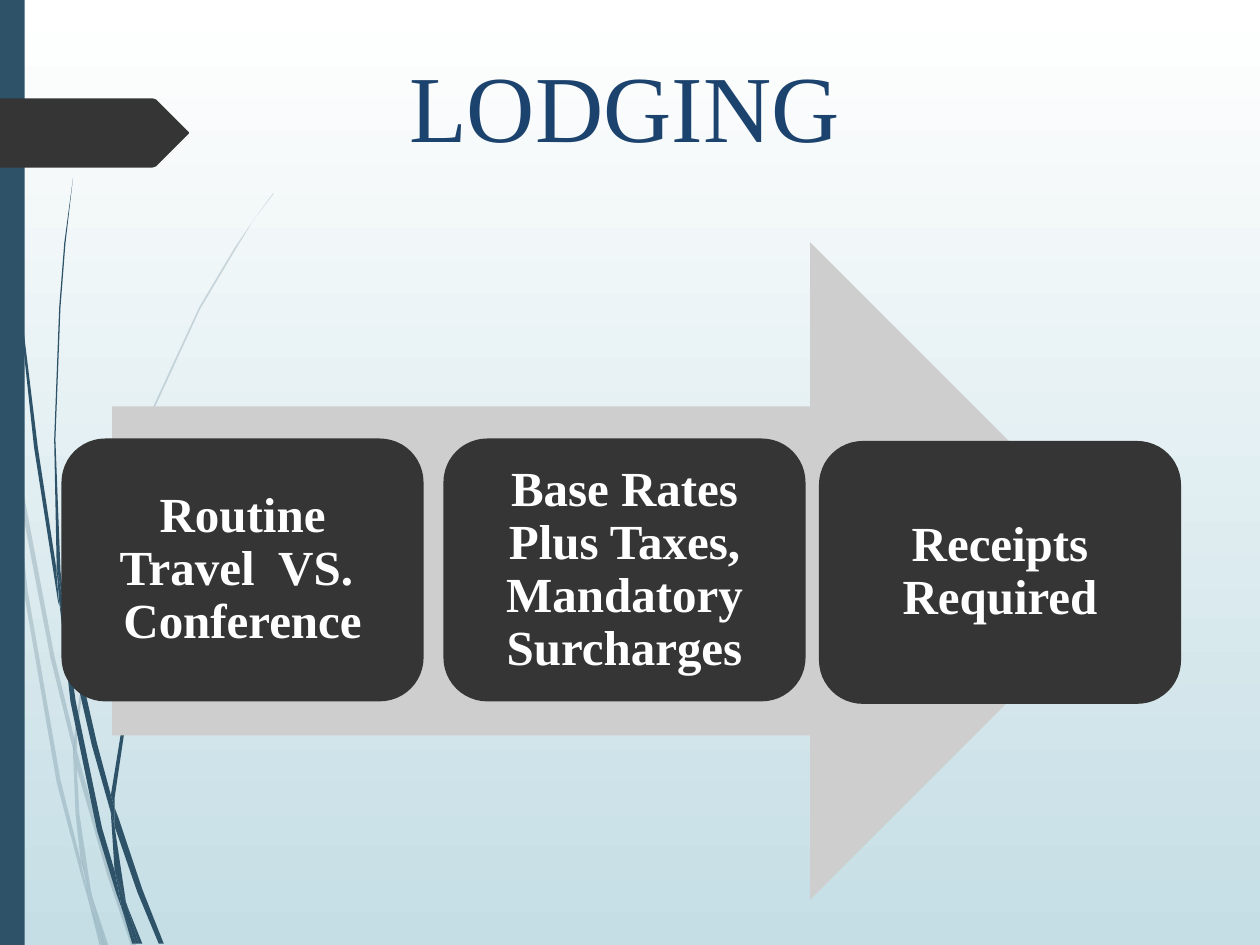
"""Build the lodging slide: a process arrow with three cards beside decorative wisps."""
from dataclasses import dataclass

from pptx import Presentation
from pptx.dml.color import RGBColor as Rgb
from pptx.enum.shapes import MSO_SHAPE as Preset
from pptx.enum.text import MSO_ANCHOR as Anchor, PP_ALIGN as Align
from pptx.oxml.ns import qn
from pptx.util import Cm, Pt
from lxml.etree import SubElement


@dataclass(frozen=True)
class Theme:
    """Colours, font and type sizes of the slide."""
    sky_top: str = "FFFFFF"
    sky_bottom: str = "C5DEE5"
    wisp: str = "2E5369"
    dark: str = "353535"
    arrow: str = "CECECE"
    title: str = "1C436D"
    card_text: str = "FFFFFF"
    font: str = "Times New Roman"
    title_size: int = 54
    card_size: int = 28
    faint: int = 20


PALE_WISPS = [
    [(8, 350), (6, 322), (0, 282), (0, 299), (7, 344)],
    [(40, 522), (59, 599), (59, 586), (43, 520), (10, 345), (12, 376)],
    [(64, 607), (61, 596), (61, 610), (85, 694), (104, 750), (108, 750), (88, 692)],
    [(83, 750), (86, 750), (73, 711)],
    [(64, 683), (48, 619), (22, 469), (12, 376), (8, 350), (19, 470), (45, 621),
     (64, 693), (70, 714), (69, 707)],
    [(58, 599), (60, 646), (64, 683), (67, 692), (73, 711), (72, 706), (63, 646),
     (61, 610), (61, 608)],
    [(61, 584), (76, 462), (111, 349), (159, 245), (187, 198), (201, 175), (217, 154),
     (217, 153), (201, 175), (186, 197), (158, 244), (110, 348), (75, 461), (59, 584),
     (59, 586), (61, 596)],
    [(70, 714), (79, 750), (82, 750)],
    [(61, 608), (61, 610), (61, 596), (59, 586), (58, 599)],
    [(67, 692), (65, 683), (69, 707), (70, 714), (82, 750), (83, 750), (73, 711)],
]
DARK_WISPS = [
    [(5, 110), (14, 233), (27, 355), (46, 477), (47, 481), (45, 457), (45, 453),
     (30, 355), (15, 232), (6, 109), (4, 48), (3, 0), (2, 0), (3, 48)],
    [(73, 592), (88, 645), (88, 633), (88, 631), (77, 590), (50, 472), (53, 505)],
    [(94, 649), (91, 641), (91, 656), (109, 708), (126, 749), (130, 749), (113, 706)],
    [(91, 691), (81, 657), (60, 556), (53, 505), (47, 477), (56, 557), (77, 659),
     (92, 708), (97, 722), (96, 717)],
    [(50, 472), (48, 453), (44, 349), (48, 244), (52, 193), (58, 141), (51, 193),
     (47, 244), (43, 349), (45, 449), (49, 472)],
    [(110, 749), (113, 749), (101, 719)],
    [(47, 477), (53, 505), (50, 472), (49, 472), (45, 449), (45, 453)],
    [(91, 633), (103, 552), (131, 476), (169, 406), (191, 374), (203, 359), (216, 344),
     (215, 344), (203, 358), (191, 373), (168, 405), (129, 474), (101, 551), (88, 631),
     (91, 641)],
    [(97, 722), (105, 749), (108, 749)],
    [(88, 645), (91, 691), (96, 706), (101, 719), (100, 716), (91, 656), (90, 651)],
    [(88, 645), (90, 651), (91, 656), (91, 641), (88, 631), (88, 633)],
    [(96, 706), (91, 691), (96, 717), (97, 722), (108, 749), (110, 749), (101, 719)],
]
PAGE_TAB = [(149, 107), (124, 132), (121, 133), (0, 133), (0, 78), (121, 78), (124, 79),
            (149, 104), (150, 105), (150, 106)]
CARDS = [
    (1.24, 8.84, "Routine Travel  VS.  Conference"),
    (8.94, 8.84, "Base Rates Plus Taxes, Mandatory Surcharges"),
    (16.51, 8.89, "Receipts Required"),
]


class SlideBuilder:
    """Draws themed elements on one slide."""

    def __init__(self, slide, theme):
        """Keep the slide and its theme."""
        self.slide = slide
        self.theme = theme

    def background(self):
        """Fill the background from top to bottom."""
        fill = self.slide.background.fill
        fill.gradient()
        fill.gradient_angle = 270
        colours = (self.theme.sky_top, self.theme.sky_bottom)
        for stop, colour in zip(fill.gradient_stops, colours):
            stop.color.rgb = Rgb.from_string(colour)

    def paint(self, shape, colour, opacity=100):
        """Give a shape a flat fill without line or shadow."""
        shape.shadow.inherit = False
        shape.line.fill.background()
        shape.fill.solid()
        shape.fill.fore_color.rgb = Rgb.from_string(colour)
        if opacity < 100:
            solid_fill = shape.element.spPr.find(qn("a:solidFill"))
            SubElement(solid_fill[0], qn("a:alpha"), val=str(opacity * 1000))

    def outline(self, points, colour, opacity=100):
        """Draw a closed outline through points given in hundredths of an inch."""
        scale = Cm(2.54) / 100
        builder = self.slide.shapes.build_freeform(*points[0], scale=scale)
        builder.add_line_segments(points[1:], close=True)
        self.paint(builder.convert_to_shape(), colour, opacity)

    def preset(self, kind, left, top, width, height, colour):
        """Draw a preset shape and return it."""
        shape = self.slide.shapes.add_shape(kind, Cm(left), Cm(top), Cm(width), Cm(height))
        self.paint(shape, colour)
        return shape

    def add_text(self, frame, text, size, colour, bold=False):
        """Add one centred run of text and return its paragraph."""
        frame.word_wrap = True
        paragraph = frame.paragraphs[0]
        paragraph.alignment = Align.CENTER
        run = paragraph.add_run()
        run.text = text
        run.font.name = self.theme.font
        run.font.size = Pt(size)
        run.font.bold = bold
        run.font.color.rgb = Rgb.from_string(colour)
        return paragraph

    def title(self, text):
        """Add the slide title."""
        box = self.slide.shapes.add_textbox(Cm(0.84), Cm(0.64), Cm(23.5), Cm(3.18))
        box.text_frame.margin_top = Cm(0.33)
        self.add_text(box.text_frame, text, self.theme.title_size, self.theme.title)

    def card(self, left, top, text):
        """Draw a rounded card with its label."""
        shape = self.preset(Preset.ROUNDED_RECTANGLE, left, top, 7.3, 5.3, self.theme.dark)
        frame = shape.text_frame
        frame.vertical_anchor = Anchor.MIDDLE
        frame.margin_left = frame.margin_right = Cm(0.3)
        frame.margin_top = frame.margin_bottom = Cm(0.3)
        paragraph = self.add_text(frame, text, self.theme.card_size, self.theme.card_text, True)
        paragraph.line_spacing = 0.9


def main():
    """Build and save the presentation."""
    presentation = Presentation()
    presentation.slide_width, presentation.slide_height = Cm(25.4), Cm(19.05)
    theme = Theme()
    builder = SlideBuilder(presentation.slides.add_slide(presentation.slide_layouts[6]), theme)
    builder.background()
    for points in PALE_WISPS:
        builder.outline(points, theme.wisp, theme.faint)
    for points in DARK_WISPS:
        builder.outline(points, theme.wisp)
    builder.preset(Preset.RECTANGLE, 0, 0, 0.5, 19.05, theme.wisp)
    builder.outline(PAGE_TAB, theme.dark)
    builder.title("LODGING")
    builder.preset(Preset.RIGHT_ARROW, 2.26, 4.88, 20.7, 13.26, theme.arrow)
    for left, top, text in CARDS:
        builder.card(left, top, text)
    presentation.save("out.pptx")


if __name__ == "__main__":
    main()
